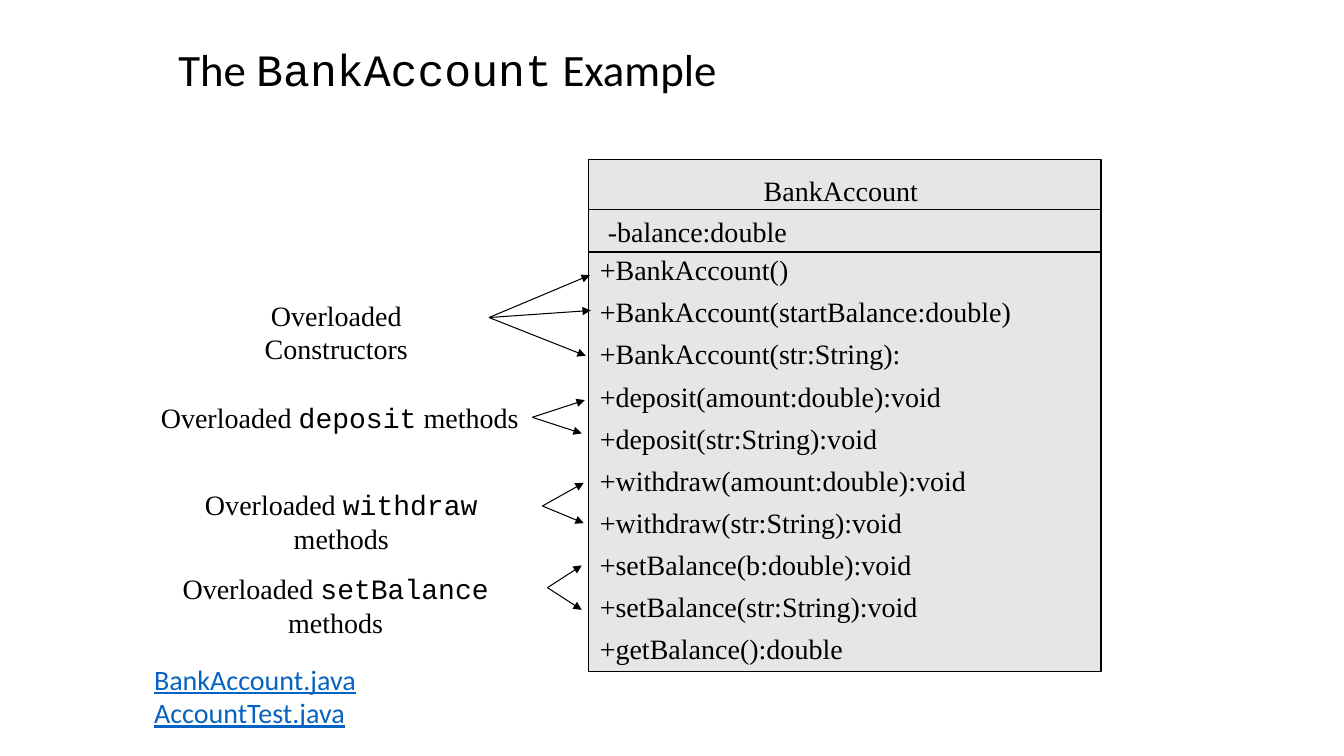
"""Build the BankAccount class diagram slide with its overloaded members."""
from lxml import etree
from pptx import Presentation
from pptx.dml.color import RGBColor
from pptx.enum import shapes, text
from pptx.oxml.ns import qn
from pptx.util import Inches, Pt

BLACK = RGBColor(0x00, 0x00, 0x00)
LINK = RGBColor(0x05, 0x63, 0xC1)
GRAY = RGBColor(0xE7, 0xE6, 0xE6)
SANS, SERIF, MONO = "Calibri", "Times New Roman", "Courier New"

TITLE = [("The ", SANS), ("BankAccount", MONO), (" Example", SANS)]
FILES = "BankAccount.java\vAccountTest.java"
CLASS_NAME = "BankAccount"
FIELD = "-balance:double"
METHODS = [
    "+BankAccount()",
    "+BankAccount(startBalance:double)",
    "+BankAccount(str:String):",
    "+deposit(amount:double):void",
    "+deposit(str:String):void",
    "+withdraw(amount:double):void",
    "+withdraw(str:String):void",
    "+setBalance(b:double):void",
    "+setBalance(str:String):void",
    "+getBalance():double",
]
LABELS = [
    ((1.84, 2.91, 2.99, 0.43), False, [("Overloaded\vConstructors", SERIF)]),
    ((1.49, 3.92, 3.76, 0.44), True,
     [("Overloaded ", SERIF), ("deposit", MONO), (" methods", SERIF)]),
    ((1.43, 4.79, 3.91, 0.43), False,
     [("Overloaded ", SERIF), ("withdraw", MONO), ("\vmethods", SERIF)]),
    ((1.21, 5.62, 4.24, 0.43), False,
     [("Overloaded ", SERIF), ("setBalance", MONO), ("\vmethods", SERIF)]),
]
ARROWS = [
    ((4.85, 3.15), [(5.85, 2.73), (5.86, 3.08), (5.81, 3.53)]),
    ((5.28, 4.14), [(5.8, 3.97), (5.77, 4.3)]),
    ((5.38, 5.02), [(5.79, 4.79), (5.79, 5.19)]),
    ((5.43, 5.83), [(5.77, 5.61), (5.77, 6.05)]),
]
BOX_LEFT, BOX_TOP, BOX_SIZE = 5.84, 1.58, 5.08
DIVIDERS = [2.08, 2.5]


def add_text(s, at, paragraphs, size=20, color=BLACK, align=None, wrap=True):
    sp = s.shapes.add_textbox(*map(Inches, at))
    tf = sp.text_frame
    tf.word_wrap = wrap
    for i, runs in enumerate(paragraphs):
        p = tf.add_paragraph() if i else tf.paragraphs[0]
        p.alignment = align
        p.font.size = Pt(size)
        p.font.color.rgb = color
        for words, font in runs:
            for j, line in enumerate(words.split("\v")):
                if j:
                    p.add_line_break()
                if line:
                    r = p.add_run()
                    r.text = line
                    r.font.name = font
                    r.font.size = Pt(size)
                    r.font.color.rgb = color
    return tf


def add_line(s, start, end, arrow=False):
    cx = s.shapes.add_connector(
        shapes.MSO_CONNECTOR.STRAIGHT, *map(Inches, (*start, *end)))
    cx.line.color.rgb = BLACK
    cx.line.width = Pt(0.75)
    if arrow:
        etree.SubElement(cx.line._get_or_add_ln(), qn("a:tailEnd"), type="triangle")
    etree.SubElement(cx._element.spPr, qn("a:effectLst"))


def main():
    prs = Presentation()
    prs.slide_width, prs.slide_height = Inches(13.33), Inches(7.5)
    s = prs.slides.add_slide(prs.slide_layouts[6])

    tf = add_text(s, (1.67, 0.17, 5.82, 1.09), [TITLE], size=32)
    tf.vertical_anchor = text.MSO_ANCHOR.MIDDLE
    tf.paragraphs[0].line_spacing = 0.9

    tf = add_text(s, (1.43, 6.52, 3.08, 0.77), [[(FILES, SANS)]], color=LINK)
    for r in tf.paragraphs[0].runs:
        r.font.underline = True

    box = s.shapes.add_shape(
        shapes.MSO_SHAPE.RECTANGLE,
        *map(Inches, (BOX_LEFT, BOX_TOP, BOX_SIZE, BOX_SIZE)))
    box.shadow.inherit = False
    box.fill.solid()
    box.fill.fore_color.rgb = GRAY
    box.line.color.rgb = BLACK
    box.line.width = Pt(0.75)
    for y in DIVIDERS:
        add_line(s, (BOX_LEFT, y), (BOX_LEFT + BOX_SIZE, y))

    center = text.PP_ALIGN.CENTER
    add_text(s, (BOX_LEFT, 1.67, 5, 0.44), [[(CLASS_NAME, SERIF)]], align=center)
    add_text(s, (5.93, 2.08, 4.5, 0.44), [[(FIELD, SERIF)]])
    tf = add_text(s, (5.85, 2.46, BOX_SIZE, 4.22), [[(m, SERIF)] for m in METHODS])
    for p in tf.paragraphs:
        p.space_before = Pt(6)

    for at, wrap, runs in LABELS:
        add_text(s, at, [runs], align=center, wrap=wrap)
    for start, tips in ARROWS:
        for tip in tips:
            add_line(s, start, tip, arrow=True)

    prs.save("out.pptx")


if __name__ == "__main__":
    main()
